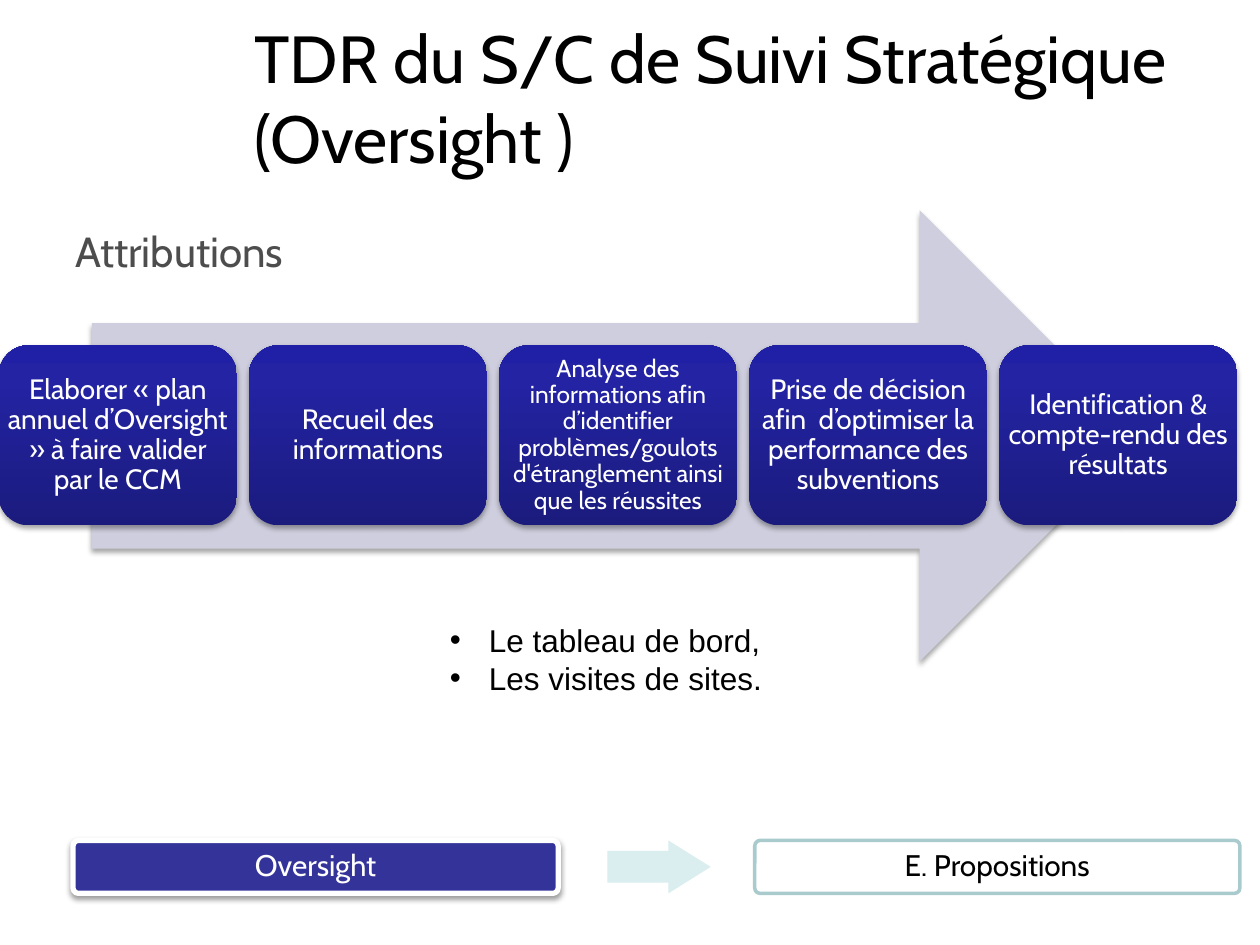
import copy
from dataclasses import dataclass

import pptx
import pptx.dml.color
import pptx.enum.shapes
import pptx.enum.text
import pptx.oxml
import pptx.oxml.ns
import pptx.util
from pptx.util import Inches, Pt

SHAPE = pptx.enum.shapes.MSO_SHAPE
ALIGN = pptx.enum.text.PP_ALIGN
ANCHOR = pptx.enum.text.MSO_ANCHOR
HEADING_FONT = "Cabin"
CARD_GRADIENT = ((0, "1B1B7E"), (0.8, "2323A3"), (1, "2020A6"))


@dataclass
class Area:
    left: float
    top: float
    width: float
    height: float

    def lengths(self) -> tuple:
        return tuple(Inches(v) for v in (self.left, self.top, self.width, self.height))


@dataclass
class Step:
    text: str
    size: int = 16


@dataclass
class Label:
    text: str
    left: float
    fill: str
    border: str
    border_width: float
    color: str
    shadow: bool


STEPS = [
    Step("Elaborer « plan annuel d’Oversight » à faire valider par le CCM"),
    Step("Recueil des informations"),
    Step("Analyse des informations afin d’identifier problèmes/goulots "
         "d'étranglement ainsi que les réussites", 14),
    Step("Prise de décision afin  d’optimiser la performance des subventions"),
    Step("Identification & compte-rendu des résultats"),
]
LABELS = [
    Label("Oversight", 0.58, "333399", "FFFFFF", 3, "FFFFFF", True),
    Label("E. Propositions", 5.99, "FFFFFF", "AACBCE", 2, "000000", False),
]
SOURCES = ["Le tableau de bord,", "Les visites de sites."]


def rgb(value: str) -> pptx.dml.color.RGBColor:
    return pptx.dml.color.RGBColor.from_string(value)


def style_paragraph(para, size: float, color: str, name: str = HEADING_FONT,
                    align=ALIGN.LEFT) -> None:
    para.alignment = align
    para.font.size = Pt(size)
    para.font.name = name
    para.font.color.rgb = rgb(color)


def add_plain_shape(page, kind, area: Area, fill: str | None = None):
    """Add a preset shape without outline or shadow."""
    shape = page.shapes.add_shape(kind, *area.lengths())
    shape.shadow.inherit = False
    shape.line.fill.background()
    if fill:
        shape.fill.solid()
        shape.fill.fore_color.rgb = rgb(fill)
    return shape


def add_shadow(shape, distance: float, opacity: int) -> None:
    """Put a soft black shadow below the shape."""
    effects = shape._element.spPr.find(pptx.oxml.ns.qn("a:effectLst"))
    effects.append(pptx.oxml.parse_xml(
        f'<a:outerShdw {pptx.oxml.ns.nsdecls("a")} blurRad="{Pt(3.1)}" '
        f'dist="{Pt(distance)}" dir="5400000" rotWithShape="0">'
        f'<a:srgbClr val="000000"><a:alpha val="{opacity * 1000}"/></a:srgbClr>'
        '</a:outerShdw>'))


def fill_gradient(shape) -> None:
    """Shade the shape from dark at the bottom to light at the top."""
    shape.fill.gradient()
    shape.fill.gradient_angle = 90
    stop_list = shape._element.spPr.find(".//" + pptx.oxml.ns.qn("a:gsLst"))
    stop_list.append(copy.deepcopy(stop_list[-1]))
    for stop, (position, color) in zip(shape.fill.gradient_stops, CARD_GRADIENT):
        stop.position = position
        stop.color.rgb = rgb(color)


def set_label(shape, text: str, size: float, color: str, inset: float) -> None:
    frame = shape.text_frame
    frame.word_wrap = True
    frame.vertical_anchor = ANCHOR.MIDDLE
    frame.margin_left = frame.margin_right = Inches(inset)
    frame.margin_top = frame.margin_bottom = Inches(inset)
    para = frame.paragraphs[0]
    para.text = text
    para.line_spacing = 0.9
    style_paragraph(para, size, color, align=ALIGN.CENTER)


def place(box, area: Area) -> None:
    box.left, box.top, box.width, box.height = area.lengths()


def add_title(page) -> None:
    title = page.shapes.title
    place(title, Area(1.92, 0.17, 7.92, 1.2))
    frame = title.text_frame
    frame.text = "TDR du S/C de Suivi Stratégique (Oversight )"
    frame.auto_size = pptx.enum.text.MSO_AUTO_SIZE.NONE
    frame.vertical_anchor = ANCHOR.MIDDLE
    style_paragraph(frame.paragraphs[0], 38, "000000")


def add_subtitle(page) -> None:
    box = page.shapes.add_textbox(*Area(0.5, 1.74, 9.33, 0.6).lengths())
    box.text_frame.word_wrap = True
    para = box.text_frame.paragraphs[0]
    para.text = "Attributions"
    style_paragraph(para, 24, "4D4D4D")


def add_source_list(page) -> None:
    body = page.placeholders[1]
    place(body, Area(3.47, 4.88, 2.85, 0.71))
    frame = body.text_frame
    frame.text = "\n".join(SOURCES)
    frame.auto_size = pptx.enum.text.MSO_AUTO_SIZE.NONE
    for para in frame.paragraphs:
        properties = para._p.get_or_add_pPr()
        properties.set("marL", str(Inches(0.31)))
        properties.set("indent", str(Inches(-0.31)))
        properties.append(pptx.oxml.parse_xml(
            f'<a:buChar {pptx.oxml.ns.nsdecls("a")} char="•"/>'))
        para.space_before = Pt(0)
        style_paragraph(para, 18, "000000", "Arial")


def add_process(page) -> None:
    arrow = add_plain_shape(page, SHAPE.RIGHT_ARROW, Area(0.73, 1.67, 8.36, 3.58), "CECEDE")
    add_shadow(arrow, 1.8, 35)
    for index, step in enumerate(STEPS):
        area = Area(-0.01 + 1.985 * index, 2.74, 1.89, 1.43)
        card = add_plain_shape(page, SHAPE.ROUNDED_RECTANGLE, area)
        fill_gradient(card)
        add_shadow(card, 1.8, 35)
        set_label(card, step.text, step.size, "FFFFFF", 0)


def add_footer(page) -> None:
    top, height = 6.67, 0.42
    for label in LABELS:
        area = Area(label.left, top, 3.85, height)
        box = add_plain_shape(page, SHAPE.ROUNDED_RECTANGLE, area, label.fill)
        box.adjustments[0] = 0.1
        box.line.color.rgb = rgb(label.border)
        box.line.width = Pt(label.border_width)
        if label.shadow:
            add_shadow(box, 1.6, 38)
        set_label(box, label.text, 17, label.color, 0.07)
    arrow = add_plain_shape(page, SHAPE.RIGHT_ARROW, Area(4.82, top, 0.82, height), "DAEDEF")
    arrow.adjustments[0] = 0.6
    arrow.adjustments[1] = 0.8


def main() -> None:
    deck = pptx.Presentation()
    deck.slide_width, deck.slide_height = Inches(10), Inches(7.5)
    page = deck.slides.add_slide(deck.slide_layouts[1])
    add_title(page)
    add_source_list(page)
    add_footer(page)
    add_subtitle(page)
    add_process(page)
    # The list stands in front of the large arrow.
    page.shapes._spTree.append(page.placeholders[1]._element)
    deck.save("out.pptx")


if __name__ == "__main__":
    main()
